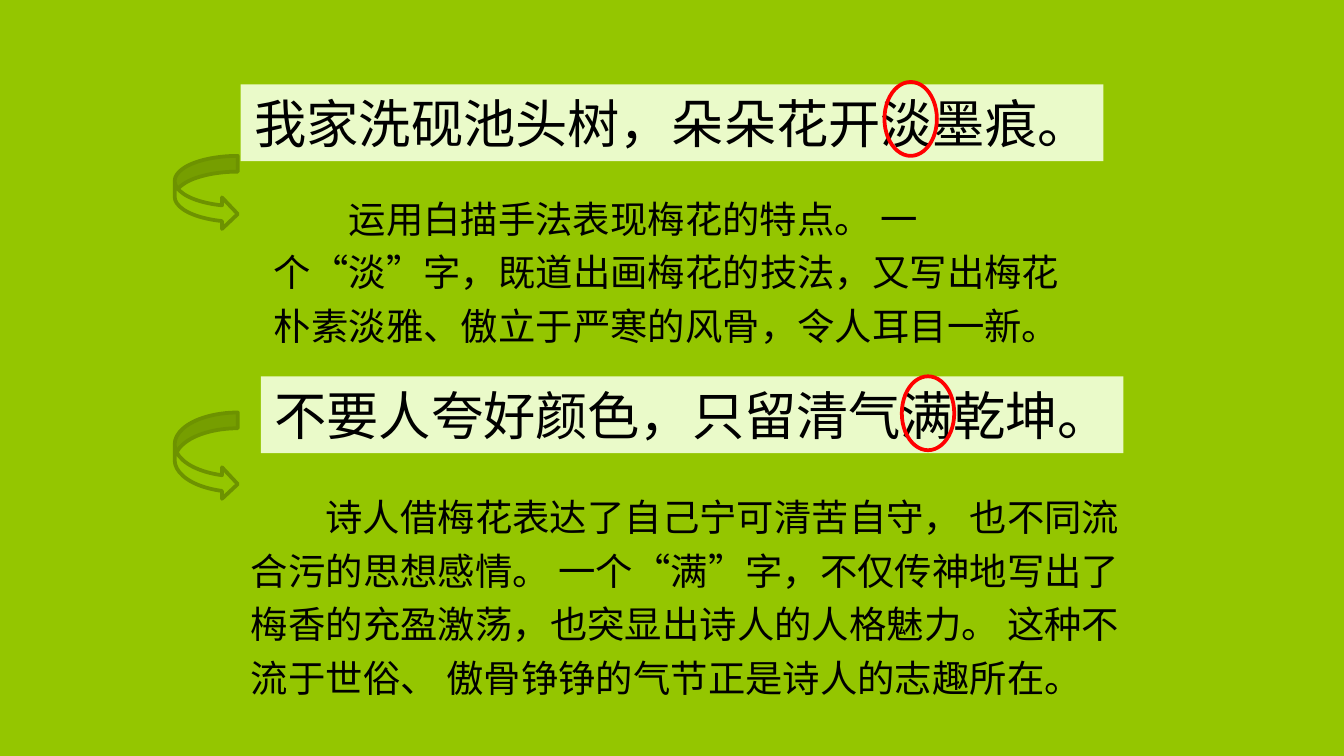
from lxml import etree
from pptx import Presentation
from pptx.dml.color import RGBColor
from pptx.enum.lang import MSO_LANGUAGE_ID
from pptx.enum.shapes import MSO_SHAPE
from pptx.enum.text import MSO_ANCHOR, PP_ALIGN
from pptx.oxml.ns import qn
from pptx.util import Pt

RECT, OVAL, CURVE = MSO_SHAPE.RECTANGLE, MSO_SHAPE.OVAL, MSO_SHAPE.CURVED_RIGHT_ARROW
LEFT, CENTER = PP_ALIGN.LEFT, PP_ALIGN.CENTER
TOP = MSO_ANCHOR.TOP
CHINESE = MSO_LANGUAGE_ID.SIMPLIFIED_CHINESE

COLORS = {"back": "94C600", "band": "EAFAC9", "text": "000000",
          "ring": "FF0000", "edge": "6D9200"}
HAN = "Noto Sans CJK SC"

# Boxes are left, top, width, height in points.
PARTS = [
    {"verse": "我家洗砚池头树，朵朵花开淡墨痕。",
     "note": "运用白描手法表现梅花的特点。 一个“淡”字，既道出画梅花的技法，"
             "又写出梅花朴素淡雅、傲立于严寒的风骨，令人耳目一新。",
     "band": (128.9, 45.2), "body": (139.7, 96.5, 440.6, 94.3),
     "ring": (473.8, 43.9), "arrow": (83.5, 39.6)},
    {"verse": "不要人夸好颜色，只留清气满乾坤。",
     "note": "诗人借梅花表达了自己宁可清苦自守， 也不同流合污的思想感情。 "
             "一个“满”字，不仅传神地写出了梅香的充盈激荡，也突显出诗人的人格魅力。 "
             "这种不流于世俗、 傲骨铮铮的气节正是诗人的志趣所在。",
     "band": (139.7, 201.6), "body": (127.4, 256.3, 492.5, 123.8),
     "ring": (483.1, 201.6), "arrow": (221, 46.8)},
]
BAND = (462.2, 41.2)
RING = (28.1, 39.6)
ARROW_X, ARROW_W = 93.6, 33.8


def color(name):
    return RGBColor.from_string(COLORS[name])


def write(shape, text, size, font, align=LEFT, spacing=1.0, indent=0):
    frame = shape.text_frame
    frame.word_wrap = True
    frame.vertical_anchor = TOP
    para = frame.paragraphs[0]
    para.alignment = align
    para.line_spacing = spacing
    para._p.get_or_add_pPr().set("indent", str(Pt(indent)))
    run = para.add_run()
    run.text = text
    run.font.size = Pt(size)
    run.font.name = font
    run.font.language_id = CHINESE
    run.font.color.rgb = color("text")
    etree.SubElement(run.font._element, qn("a:ea")).set("typeface", HAN)


def draw(slide, kind, box, fill=None, line=None):
    shape = slide.shapes.add_shape(kind, *map(Pt, box))
    shape.shadow.inherit = False
    if fill:
        shape.fill.solid()
        shape.fill.fore_color.rgb = color(fill)
    else:
        shape.fill.background()
    if line:
        shape.line.color.rgb = color(line)
        shape.line.width = Pt(2)
    else:
        shape.line.fill.background()
    return shape


def main():
    deck = Presentation()
    deck.slide_width, deck.slide_height = Pt(720), Pt(405)
    slide = deck.slides.add_slide(deck.slide_layouts[6])
    slide.background.fill.solid()
    slide.background.fill.fore_color.rgb = color("back")

    for part in PARTS:
        band = draw(slide, RECT, part["band"] + BAND, fill="band")
        write(band, part["verse"], 28, HAN, align=CENTER)
        body = slide.shapes.add_textbox(*map(Pt, part["body"]))
        write(body, part["note"], 20, "Calibri", spacing=1.2, indent=40)

    for part in PARTS:
        draw(slide, OVAL, part["ring"] + RING, line="ring")
        top, height = part["arrow"]
        draw(slide, CURVE, (ARROW_X, top, ARROW_W, height), fill="back", line="edge")

    deck.save("out.pptx")


if __name__ == "__main__":
    main()
